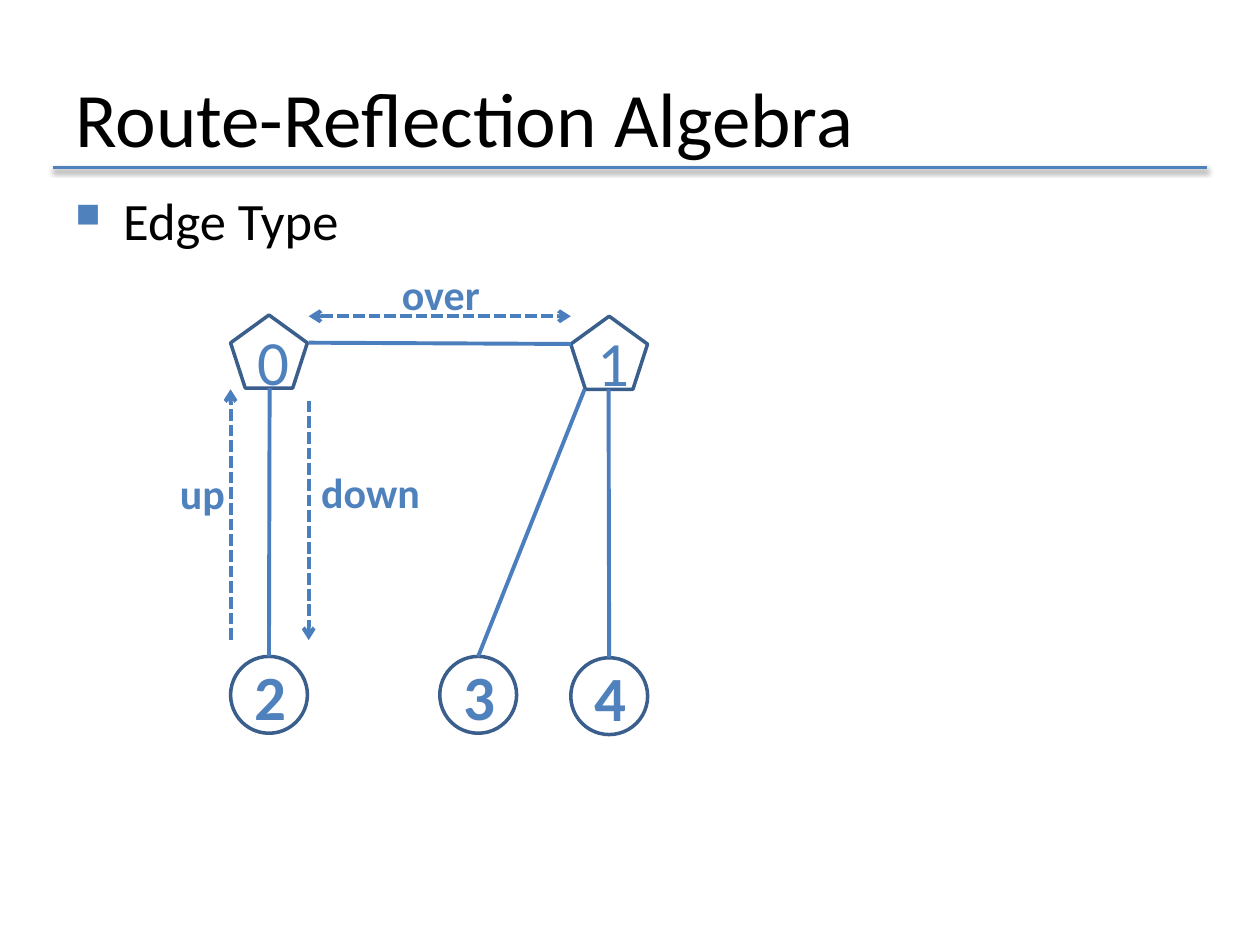
"""Build the Route-Reflection Algebra slide with its edge type diagram."""
import dataclasses

import lxml.etree
import pptx
import pptx.dml.color
import pptx.enum.dml
import pptx.enum.shapes
import pptx.enum.text
import pptx.oxml.ns
import pptx.util

Inches = pptx.util.Inches
Pt = pptx.util.Pt
qn = pptx.oxml.ns.qn
color = pptx.dml.color.RGBColor.from_string
anchors = pptx.enum.text.MSO_ANCHOR
shape_types = pptx.enum.shapes.MSO_SHAPE


@dataclasses.dataclass(frozen=True)
class Theme:
    font: str = "Calibri"
    text: str = "000000"
    accent: str = "4F81BD"
    edge: str = "4B7EBC"
    outline: str = "3A5F8C"
    node_fill: str = "FFFFFF"
    title_size: int = 44
    body_size: int = 30
    node_size: int = 36
    label_size: int = 24
    outline_width: float = 2
    edge_width: float = 2.25


theme = Theme()
presentation = pptx.Presentation()
presentation.slide_width = Inches(10)
presentation.slide_height = Inches(7.5)
slide = presentation.slides.add_slide(presentation.slide_layouts[6])


def write(shape, text, size, text_color, bold=False, anchor=anchors.TOP):
    frame = shape.text_frame
    frame.word_wrap = True
    frame.vertical_anchor = anchor
    paragraph = frame.paragraphs[0]
    run = paragraph.add_run()
    run.text = text
    run.font.name = theme.font
    run.font.size = Pt(size)
    run.font.bold = bold
    run.font.color.rgb = color(text_color)
    return paragraph


def add_line(start, end, line_color, width):
    connector = slide.shapes.add_connector(
        pptx.enum.shapes.MSO_CONNECTOR.STRAIGHT, *map(Inches, start + end))
    connector.line.color.rgb = color(line_color)
    connector.line.width = Pt(width)
    effects = lxml.etree.SubElement(connector._element.spPr, qn("a:effectLst"))
    return connector, effects


title = slide.shapes.add_textbox(Inches(0.5), Inches(0.3), Inches(9), Inches(1.25))
write(title, "Route-Reflection Algebra", theme.title_size, theme.text, anchor=anchors.MIDDLE)

rule, rule_effects = add_line((0.42, 1.33), (9.58, 1.33), theme.accent, theme.outline_width)
shadow = lxml.etree.SubElement(
    rule_effects, qn("a:outerShdw"), blurRad=str(Pt(3.1)), dist=str(Pt(1.6)),
    dir="5400000", rotWithShape="0")
shadow_color = lxml.etree.SubElement(shadow, qn("a:srgbClr"), val=theme.text)
lxml.etree.SubElement(shadow_color, qn("a:alpha"), val="38000")

body = slide.shapes.add_textbox(Inches(0.5), Inches(1.44), Inches(3.1), Inches(0.89))
bullet = write(body, "Edge Type", theme.body_size, theme.text)
bullet.space_before = Pt(6)
properties = bullet._p.get_or_add_pPr()
properties.set("marL", str(Inches(0.38)))
properties.set("indent", str(Inches(-0.38)))
bullet_color = lxml.etree.SubElement(properties, qn("a:buClr"))
lxml.etree.SubElement(bullet_color, qn("a:srgbClr"), val=theme.accent)
lxml.etree.SubElement(properties, qn("a:buSzPct"), val="65000")
lxml.etree.SubElement(properties, qn("a:buChar"), char="■")

nodes = {}
for name, left, top, height, kind in (
    ("0", 1.83, 2.5, 0.58, shape_types.REGULAR_PENTAGON),
    ("1", 4.53, 2.51, 0.58, shape_types.REGULAR_PENTAGON),
    ("2", 1.83, 5.21, 0.61, shape_types.OVAL),
    ("3", 3.49, 5.21, 0.61, shape_types.OVAL),
    ("4", 4.53, 5.22, 0.61, shape_types.OVAL),
):
    node = slide.shapes.add_shape(kind, Inches(left), Inches(top), Inches(0.61), Inches(height))
    node.shadow.inherit = False
    node.fill.solid()
    node.fill.fore_color.rgb = color(theme.node_fill)
    node.line.color.rgb = color(theme.outline)
    node.line.width = Pt(theme.outline_width)
    paragraph = write(node, name, theme.node_size, theme.accent,
                      bold=kind == shape_types.OVAL, anchor=anchors.MIDDLE)
    paragraph.alignment = pptx.enum.text.PP_ALIGN.CENTER
    nodes[name] = node

add_line((2.45, 2.72), (4.53, 2.73), theme.edge, theme.edge_width)
for start, end, client in (
    ((2.14, 3.08), (2.14, 5.21), "2"),
    ((4.64, 3.09), (3.79, 5.21), "3"),
    ((4.83, 3.09), (4.83, 5.22), "4"),
):
    edge, _ = add_line(start, end, theme.edge, theme.edge_width)
    edge.end_connect(nodes[client], 0)

for start, end, arrow_ends in (
    ((1.83, 5.08), (1.83, 3.09), ("tailEnd",)),
    ((2.45, 3.18), (2.45, 5.08), ("tailEnd",)),
    ((2.45, 2.51), (4.53, 2.51), ("headEnd", "tailEnd")),
):
    arrow, _ = add_line(start, end, theme.edge, theme.edge_width)
    arrow.line.dash_style = pptx.enum.dml.MSO_LINE.SQUARE_DOT
    for arrow_end in arrow_ends:
        lxml.etree.SubElement(arrow.line._get_or_add_ln(), qn(f"a:{arrow_end}"), type="arrow")

for text, left, top in (("over", 3.09, 2.08), ("down", 2.45, 3.65), ("up", 1.33, 3.66)):
    label = slide.shapes.add_textbox(Inches(left), Inches(top), Inches(1.01), Inches(0.5))
    write(label, text, theme.label_size, theme.accent, bold=True)

presentation.save("out.pptx")
